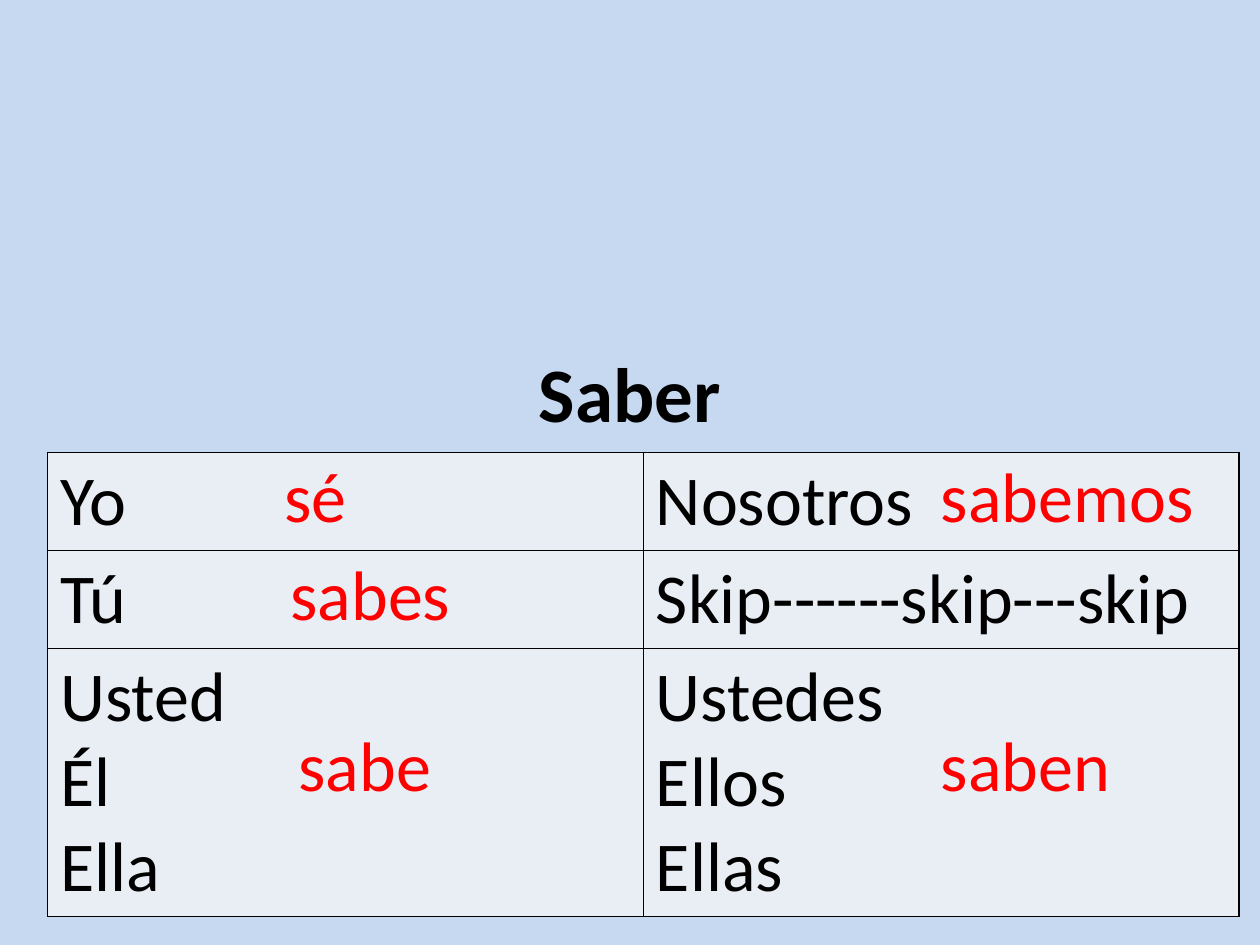
from lxml import etree
from pptx import Presentation
from pptx.dml.color import RGBColor
from pptx.enum.text import MSO_ANCHOR, MSO_AUTO_SIZE, PP_ALIGN
from pptx.oxml.ns import qn
from pptx.util import Cm, Pt

CENTER = PP_ALIGN.CENTER
MIDDLE = MSO_ANCHOR.MIDDLE
GROW = MSO_AUTO_SIZE.SHAPE_TO_FIT_TEXT

BACKGROUND = RGBColor(0xC6, 0xD9, 0xF1)
CELL_FILL = RGBColor(0xE9, 0xED, 0xF4)
BLACK = RGBColor(0, 0, 0)
RED = RGBColor(0xFF, 0, 0)

PRONOUNS = [
    [["Yo"], ["Nosotros"]],
    [["Tú"], ["Skip------skip---skip"]],
    [["Usted", "Él", "Ella"], ["Ustedes", "Ellos", "Ellas"]],
]
COLUMN_WIDTH = 12.01
ROW_HEIGHTS = [1.97, 1.97, 5.4]

# Verb form, left, top in centimetres
VERB_FORMS = [
    ("sé", 5.49, 8.99),
    ("sabes", 5.61, 10.97),
    ("sabe", 5.77, 14.43),
    ("sabemos", 18.72, 8.99),
    ("saben", 18.72, 14.43),
]


class SlideBuilder:
    font = "Calibri"
    text_size = 40
    title_size = 44

    def __init__(self, slide):
        self.slide = slide
        fill = slide.background.fill
        fill.solid()
        fill.fore_color.rgb = BACKGROUND

    def add_lines(self, frame, lines, color, size=text_size, bold=False, align=None):
        for index, line in enumerate(lines):
            paragraph = frame.add_paragraph() if index else frame.paragraphs[0]
            paragraph.alignment = align
            run = paragraph.add_run()
            run.text = line
            run.font.name = self.font
            run.font.size = Pt(size)
            run.font.bold = bold
            run.font.color.rgb = color

    def title(self, text, left, top, width, height):
        shape = self.slide.shapes.title
        shape.left, shape.top = Cm(left), Cm(top)
        shape.width, shape.height = Cm(width), Cm(height)
        shape.text_frame.vertical_anchor = MIDDLE
        self.add_lines(shape.text_frame, [text], BLACK, self.title_size, True, CENTER)

    def text(self, text, left, top, width, height):
        shape = self.slide.shapes.add_textbox(Cm(left), Cm(top), Cm(width), Cm(height))
        frame = shape.text_frame
        frame.word_wrap = True
        frame.auto_size = GROW
        self.add_lines(frame, [text], RED)

    def table(self, rows, left, top, column_width, row_heights):
        columns = len(rows[0])
        table = self.slide.shapes.add_table(
            len(rows), columns, Cm(left), Cm(top),
            Cm(columns * column_width), Cm(sum(row_heights))).table
        for column in table.columns:
            column.width = Cm(column_width)
        for row, height, contents in zip(table.rows, row_heights, rows):
            row.height = Cm(height)
            for cell, lines in zip(row.cells, contents):
                self.border(cell)
                cell.fill.solid()
                cell.fill.fore_color.rgb = CELL_FILL
                self.add_lines(cell.text_frame, lines, BLACK)

    def border(self, cell):
        """Draw a thin black line on all four sides of the cell."""
        properties = cell._tc.get_or_add_tcPr()
        for side in ("a:lnL", "a:lnR", "a:lnT", "a:lnB"):
            line = etree.SubElement(properties, qn(side), w=str(Pt(1)))
            fill = etree.SubElement(line, qn("a:solidFill"))
            etree.SubElement(fill, qn("a:srgbClr"), val=str(BLACK))


def main():
    presentation = Presentation()
    presentation.slide_width = Cm(25.4)
    presentation.slide_height = Cm(19.05)
    title_only = presentation.slide_layouts[5]
    builder = SlideBuilder(presentation.slides.add_slide(title_only))

    builder.title("Saber", 0, 6.73, 25.4, 2.34)
    builder.table(PRONOUNS, 0.96, 9.12, COLUMN_WIDTH, ROW_HEIGHTS)
    for form, left, top in VERB_FORMS:
        builder.text(form, left, top, 6.68, 1.96)

    presentation.save("out.pptx")


if __name__ == "__main__":
    main()
